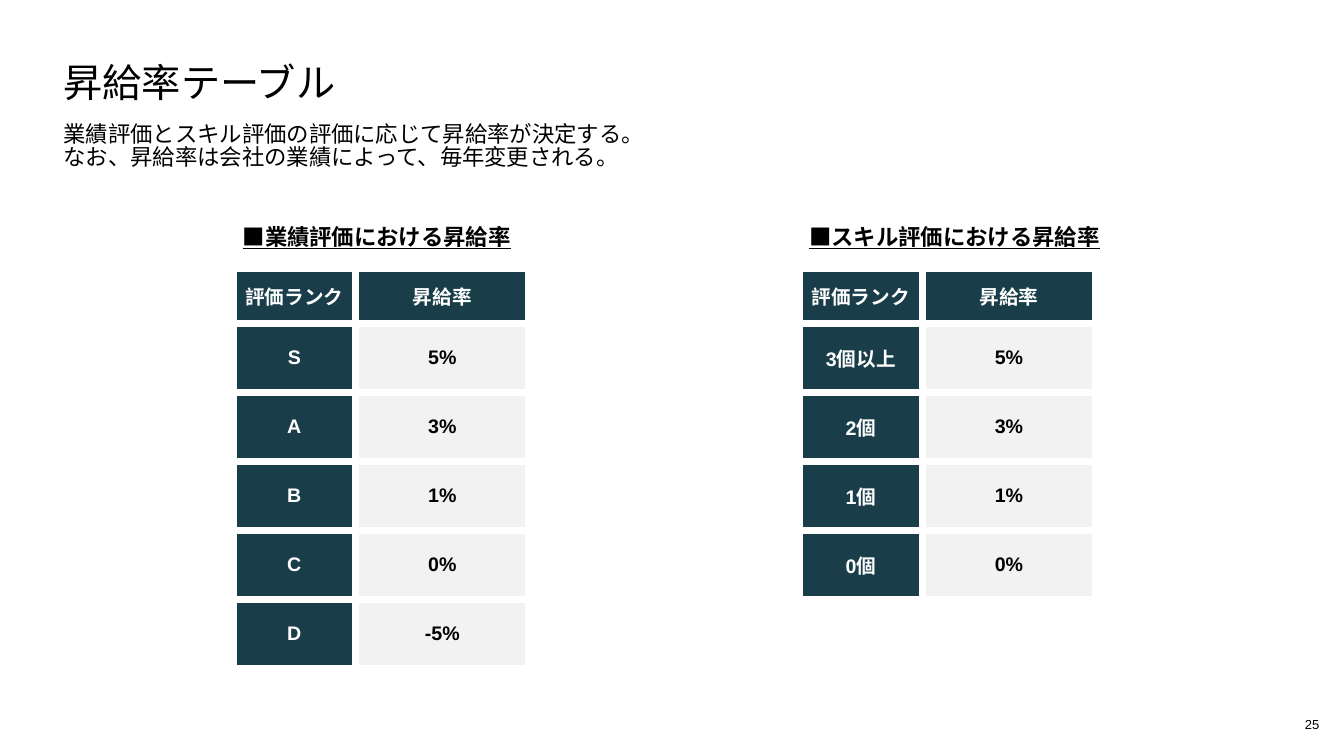
from lxml import etree
from pptx import Presentation
from pptx import util as u
from pptx.dml import color
from pptx.enum import text
from pptx.oxml import ns

Pt = u.Pt
CJK = "Noto Sans CJK JP"
DARK, PALE, WHITE, BLACK = "193E4A", "F2F2F2", "FFFFFF", "000000"
MID = text.MSO_ANCHOR.MIDDLE
LEFT, CENTER = text.PP_ALIGN.LEFT, text.PP_ALIGN.CENTER


def rgb(code):
    """Turn a hex string into a colour."""
    return color.RGBColor.from_string(code)


def style(frame, size, face="Arial", ink=BLACK, bold=False, line=False,
          align=LEFT, space=1.0):
    """Format every paragraph and run of a text frame."""
    for para in frame.paragraphs:
        para.alignment = align
        para.line_spacing = space
        para.space_before = para.space_after = Pt(0)
        for run in para.runs:
            font = run.font
            font.size, font.name = Pt(size), face
            font.bold, font.underline = bold, line
            font.color.rgb = rgb(ink)
            ea = etree.SubElement(font._element, ns.qn("a:ea"))
            ea.set("typeface", CJK)


def bare(frame, anchor):
    """Remove the margins of a frame and set its anchor."""
    frame.word_wrap = True
    frame.auto_size = text.MSO_AUTO_SIZE.NONE
    frame.vertical_anchor = anchor
    frame.margin_left = frame.margin_right = Pt(0)
    frame.margin_top = frame.margin_bottom = Pt(0)


def fill_holder(holder, words, box, size, space):
    """Move a placeholder, and set its text without bullets."""
    holder.left, holder.top, holder.width, holder.height = map(Pt, box)
    frame = holder.text_frame
    frame.text = words
    bare(frame, text.MSO_ANCHOR.TOP)
    style(frame, size, CJK, space=space)
    for para in frame.paragraphs:
        props = para._p.get_or_add_pPr()
        props.set("marL", "0")
        props.set("indent", "0")
        etree.SubElement(props, ns.qn("a:buNone"))


def add_label(slide, words, box):
    """Add a text box and return its frame."""
    frame = slide.shapes.add_textbox(*map(Pt, box)).text_frame
    frame.word_wrap = True
    frame.text = words
    return frame


def edge(cell):
    """Draw thick white borders round a cell."""
    props = cell._tc.get_or_add_tcPr()
    for spot, side in enumerate(("lnL", "lnR", "lnT", "lnB")):
        line = etree.Element(ns.qn("a:" + side), w=str(Pt(6)))
        paint = etree.SubElement(line, ns.qn("a:solidFill"))
        etree.SubElement(paint, ns.qn("a:srgbClr"), val=WHITE)
        props.insert(spot, line)


def add_rates(slide, left, head, rates):
    """Add a heading and the rate table below it."""
    frame = add_label(slide, head, (left, 155.5, 273.6, 26.6))
    style(frame, 16, bold=True, line=True)
    rows = [("評価ランク", "昇給率")] + rates
    tall = [39.6] + [49.25] * len(rates)
    wide = (87.8, 123.8)
    table = slide.shapes.add_table(
        len(rows), 2, Pt(left), Pt(191.5), Pt(sum(wide)), Pt(sum(tall))).table
    table.first_row = table.horz_banding = False
    for col, width in zip(table.columns, wide):
        col.width = Pt(width)
    for r, row in enumerate(rows):
        table.rows[r].height = Pt(tall[r])
        for c, words in enumerate(row):
            cell = table.cell(r, c)
            dark = r == 0 or c == 0
            cell.text = words
            cell.vertical_anchor = MID
            cell.fill.solid()
            cell.fill.fore_color.rgb = rgb(DARK if dark else PALE)
            style(cell.text_frame, 14, ink=WHITE if dark else BLACK,
                  bold=True, align=CENTER)
            edge(cell)


def main():
    """Build the slide and save it."""
    deck = Presentation()
    deck.slide_width, deck.slide_height = Pt(960), Pt(540)
    slide = deck.slides.add_slide(deck.slide_layouts[1])
    title, body = slide.placeholders
    fill_holder(title, "昇給率テーブル", (45.4, 45.4, 864, 32.4), 28, 0.9)
    fill_holder(body, "業績評価とスキル評価の評価に応じて昇給率が決定する。\n"
                "なお、昇給率は会社の業績によって、毎年変更される。",
                (45.4, 89.3, 860.4, 430.6), 16, 0.83)
    add_rates(slide, 166.3, "■業績評価における昇給率",
              [("S", "5%"), ("A", "3%"), ("B", "1%"), ("C", "0%"),
               ("D", "-5%")])
    add_rates(slide, 571, "■スキル評価における昇給率",
              [("3個以上", "5%"), ("2個", "3%"), ("1個", "1%"),
               ("0個", "0%")])
    page = add_label(slide, "25", (914.6, 494.6, 45.4, 45.4))
    bare(page, MID)
    style(page, 9.3, align=CENTER)
    deck.save("out.pptx")


if __name__ == "__main__":
    main()
